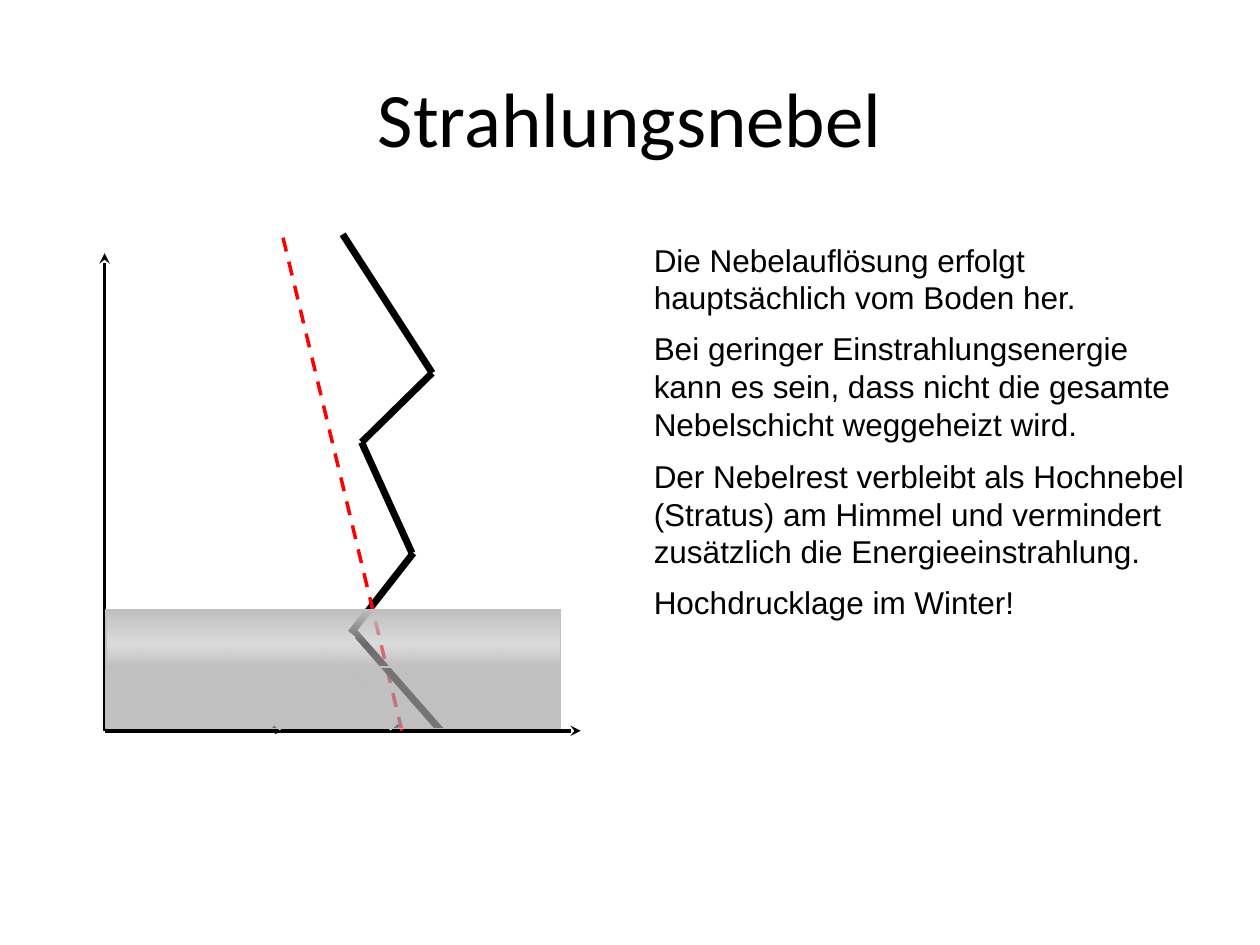
import pptx
import pptx.util
import pptx.dml.color
import pptx.enum.dml
import pptx.enum.shapes
import pptx.enum.text
import pptx.oxml.ns
import lxml.etree

Inches = pptx.util.Inches
Pt = pptx.util.Pt
qn = pptx.oxml.ns.qn
sub = lxml.etree.SubElement


def paint(color, code):
    color.rgb = pptx.dml.color.RGBColor.from_string(code)


def line(slide, box, start, end, code="000000", width=4, dash=False, arrow=False):
    left, top = box[:2]
    link = slide.shapes.add_connector(
        pptx.enum.shapes.MSO_CONNECTOR.STRAIGHT,
        Inches(left + start[0]), Inches(top + start[1]),
        Inches(left + end[0]), Inches(top + end[1]))
    paint(link.line.fill.fore_color if link.line.fill.solid() else link.line.color, code)
    link.line.width = Pt(width)
    if dash:
        link.line.dash_style = pptx.enum.dml.MSO_LINE.DASH
    if arrow:
        sub(link.line._get_or_add_ln(), qn("a:tailEnd"), type="stealth")
    sub(link._element.spPr, qn("a:effectLst"))


def layer(slide, box, top, height):
    rect = slide.shapes.add_shape(
        pptx.enum.shapes.MSO_SHAPE.RECTANGLE, Inches(box[0] + 0.01),
        Inches(box[1] + top), Inches(3.61), Inches(height))
    rect.shadow.inherit = False
    paint(rect.line.color, "BFBFBF")
    rect.line.width = Pt(0.75)
    return rect


def fade(parent, code, share):
    color = sub(parent, qn("a:srgbClr"), val=code)
    if share < 100:
        sub(color, qn("a:alpha"), val=str(share * 1000))


def fog(slide, box):
    upper = layer(slide, box, 2.98, 0.45)
    upper.fill.gradient()
    grad = upper._element.spPr.find(qn("a:gradFill"))
    stops = grad.find(qn("a:gsLst"))
    for stop in list(stops):
        stops.remove(stop)
    for pos, code, share in [(0, "BFBFBF", 100), (60, "BFBFBF", 55),
                             (100, "A6A6A6", 71), (100, "CAD9EB", 100)]:
        fade(sub(stops, qn("a:gs"), pos=str(pos * 1000)), code, share)
    grad.find(qn("a:lin")).set("ang", "5400000")

    lower = layer(slide, box, 3.44, 0.48)
    lower.fill.solid()
    paint(lower.fill.fore_color, "A6A6A6")
    solid = lower._element.spPr.find(qn("a:solidFill"))
    solid.remove(solid[0])
    fade(solid, "A6A6A6", 70)


def chart(slide, box):
    width, height = box[2:]
    zero = (0, height)
    line(slide, box, (2.45, 2.53), (1.34, 3.95))
    for end in [(width, height), (0, 0.15)]:
        line(slide, box, zero, end, width=2, arrow=True)
    curve = [(2.44, 2.53), (2.04, 1.65), (2.6, 1.1), (1.89, 0)]
    for start, end in zip(curve, curve[1:]):
        line(slide, box, start, end)
    line(slide, box, (2.36, height), (1.41, 0), "FF0000", 2, dash=True)
    for start, end in [((1.96, 3.13), (2.67, 3.94)), ((1.81, 3.33), (2.32, 3.92))]:
        line(slide, box, start, end)
    for start, end in [((1.36, 3.91), (1.79, 3.38)), ((1.78, 3.39), (1.96, 3.17)),
                       ((2.3, 3.91), (1.82, 3.36))]:
        line(slide, box, start, end, "FFFFFF", 6)
    fog(slide, box)


def label(slide, box, text, size, font, wrap=True):
    area = slide.shapes.add_textbox(*map(Inches, box))
    frame = area.text_frame
    frame.word_wrap = wrap
    frame.vertical_anchor = pptx.enum.text.MSO_ANCHOR.MIDDLE
    frame.text = text
    par = frame.paragraphs[0]
    par.font.size = Pt(size)
    par.font.name = font
    paint(par.font.color, "000000")
    return area


def title(slide, box):
    area = label(slide, box, "Strahlungsnebel", 44, "Calibri")
    area.text_frame.paragraphs[0].alignment = pptx.enum.text.PP_ALIGN.CENTER


def notes(slide, box):
    left, top = box
    rows = [
        (4.08, 0.7, "Die Nebelauflösung erfolgt hauptsächlich vom Boden her."),
        (4.41, 1.01, "Bei geringer Einstrahlungsenergie kann es sein, dass nicht "
                     "die gesamte Nebelschicht weggeheizt wird."),
        (4.65, 1.01, "Der Nebelrest verbleibt als Hochnebel (Stratus) am Himmel und "
                     "vermindert zusätzlich die Energieeinstrahlung."),
        (3.09, 0.4, "Hochdrucklage im Winter!"),
    ]
    for width, height, text in rows:
        area = label(slide, (left, top, width, height), text, 18, "Arial", height > 0.4)
        area.text_frame.auto_size = pptx.enum.text.MSO_AUTO_SIZE.SHAPE_TO_FIT_TEXT
        top += height


def main():
    deck = pptx.Presentation()
    deck.slide_width = Inches(10)
    deck.slide_height = Inches(7.5)
    slide = deck.slides.add_slide(deck.slide_layouts[6])
    title(slide, (0.5, 0.3, 9, 1.25))
    chart(slide, (0.83, 1.86, 3.78, 3.94))
    notes(slide, (5.09, 1.86))
    deck.save("out.pptx")


if __name__ == "__main__":
    main()
